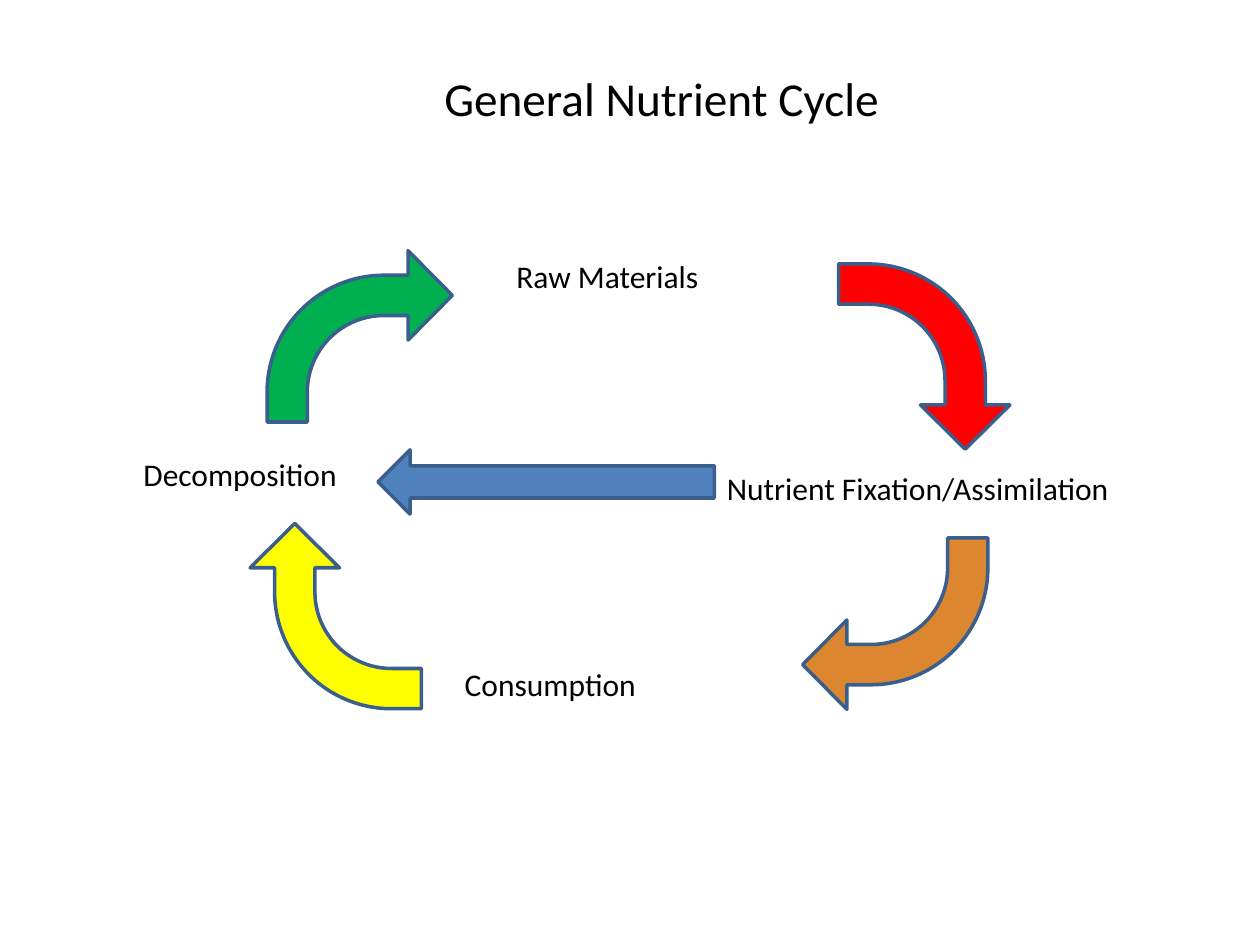
from dataclasses import dataclass

from pptx import Presentation
from pptx.dml.color import RGBColor
from pptx.enum.shapes import MSO_SHAPE
from pptx.enum.text import MSO_ANCHOR, MSO_AUTO_SIZE, PP_ALIGN
from pptx.util import Inches, Pt


@dataclass(frozen=True)
class Theme:
    font: str = "Calibri"
    title_size: float = 27
    label_size: float = 18
    line_width: float = 2
    text: str = "000000"
    outline: str = "3A5F8C"
    fixation: str = "FF0000"
    consumption: str = "DC8630"
    decomposition: str = "FFFF00"
    raw_materials: str = "00B050"
    shortcut: str = "4F81BD"


THEME = Theme()
PAGE_WIDTH, PAGE_HEIGHT = Inches(10), Inches(7.5)
BEND = (0.235, 0.261, 0.258, 0.682)
BENT_SIZE = (14.7, 18.13)
LABEL_HEIGHT = 5.33

BENT_ARROWS = [
    (66, 28.67, 90, THEME.fixation),
    (63.7, 56.93, 180, THEME.consumption),
    (19.3, 56.13, 270, THEME.decomposition),
    (21.2, 26.53, 0, THEME.raw_materials),
]
LABELS = [
    ("Raw Materials", 40, 26.53, 25),
    ("Consumption", 35.9, 69.73, 25),
    ("Decomposition", 10.4, 47.47, 25),
    ("Nutrient Fixation/Assimilation", 56.7, 48.93, 34.2),
]


def percent_frame(left, top, width, height):
    return (
        int(PAGE_WIDTH * left / 100),
        int(PAGE_HEIGHT * top / 100),
        int(PAGE_WIDTH * width / 100),
        int(PAGE_HEIGHT * height / 100),
    )


def add_text(page, text, frame, size):
    box = page.shapes.add_textbox(*percent_frame(*frame))
    box.text_frame.word_wrap = True
    box.text_frame.text = text
    font = box.text_frame.paragraphs[0].runs[0].font
    font.name = THEME.font
    font.size = Pt(size)
    font.color.rgb = RGBColor.from_string(THEME.text)
    return box


def add_title(page, text):
    box = add_text(page, text, (5, 4, 90, 16.67), THEME.title_size)
    frame = box.text_frame
    frame.vertical_anchor = MSO_ANCHOR.MIDDLE
    frame.margin_left = Inches(0.6)
    frame.margin_bottom = Inches(0.35)
    frame.paragraphs[0].alignment = PP_ALIGN.CENTER


def add_label(page, text, left, top, width):
    box = add_text(page, text, (left, top, width, LABEL_HEIGHT), THEME.label_size)
    box.text_frame.auto_size = MSO_AUTO_SIZE.SHAPE_TO_FIT_TEXT


def add_arrow(page, kind, frame, color):
    arrow = page.shapes.add_shape(kind, *percent_frame(*frame))
    arrow.shadow.inherit = False
    arrow.fill.solid()
    arrow.fill.fore_color.rgb = RGBColor.from_string(color)
    arrow.line.color.rgb = RGBColor.from_string(THEME.outline)
    arrow.line.width = Pt(THEME.line_width)
    return arrow


def add_bent_arrow(page, left, top, rotation, color):
    arrow = add_arrow(page, MSO_SHAPE.BENT_ARROW, (left, top, *BENT_SIZE), color)
    arrow.rotation = rotation
    for index, value in enumerate(BEND):
        arrow.adjustments[index] = value


def main():
    deck = Presentation()
    deck.slide_width, deck.slide_height = PAGE_WIDTH, PAGE_HEIGHT
    page = deck.slides.add_slide(deck.slide_layouts[6])
    add_title(page, "General Nutrient Cycle")
    for bent_arrow in BENT_ARROWS:
        add_bent_arrow(page, *bent_arrow)
    for label in LABELS:
        add_label(page, *label)
    add_arrow(page, MSO_SHAPE.LEFT_ARROW, (30, 47.6, 26.7, 6.8), THEME.shortcut)
    deck.save("out.pptx")


if __name__ == "__main__":
    main()
